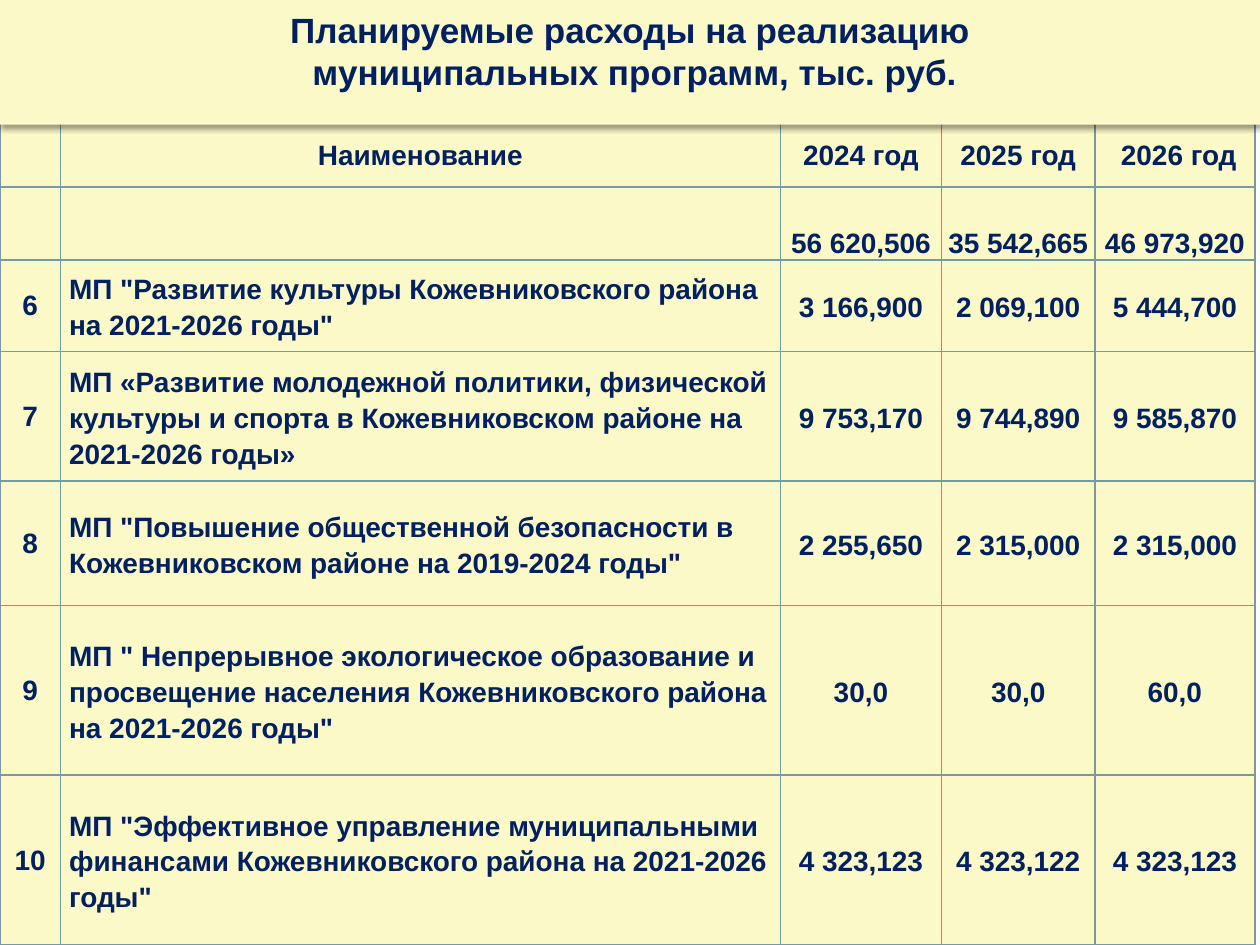
from dataclasses import dataclass

from lxml.etree import SubElement
from pptx import Presentation
from pptx.dml.color import RGBColor
from pptx.enum.text import MSO_ANCHOR as Anchor, MSO_AUTO_SIZE as AutoSize, PP_ALIGN as Align
from pptx.oxml.ns import qn
from pptx.util import Inches, Pt


@dataclass(frozen=True)
class Theme:
    paper: str = "FCF9C8"
    ink: str = "002060"
    border: str = "759AA5"
    shadow: str = "000000"
    font: str = "Arial"
    title_size: int = 20
    table_size: int = 16


THEME = Theme()
WIDTH, HEIGHT = Inches(10), Inches(7.5)

# Boxes: left, top, width, height as shares of the slide
TITLE_BOX = (0, 0, 1, 0.132)
TABLE_BOX = (0, 0.13, 0.996, 0.87)

# Relative column widths and row heights
COLUMNS = (0.48, 5.72, 1.28, 1.22, 1.27)
ROWS = (0.51, 0.58, 0.73, 1.03, 0.99, 1.35, 1.35)

TITLE = ("Планируемые расходы на реализацию", " муниципальных программ, тыс. руб.")
HEADER = ("", "Наименование", "2024 год", "2025 год", " 2026 год")
TOTALS = ("", "", "56 620,506", "35 542,665", "46 973,920")
PROGRAMS = (
    ("6", 'МП "Развитие культуры Кожевниковского района на 2021-2026 годы"',
     "3 166,900", "2 069,100", "5 444,700"),
    ("7", "МП «Развитие молодежной политики, физической культуры и спорта "
          "в Кожевниковском районе на 2021-2026 годы»",
     "9 753,170", "9 744,890", "9 585,870"),
    ("8", 'МП "Повышение общественной безопасности в Кожевниковском районе на 2019-2024 годы"',
     "2 255,650", "2 315,000", "2 315,000"),
    ("9", 'МП " Непрерывное экологическое образование и просвещение населения '
          'Кожевниковского района на 2021-2026 годы"',
     "30,0", "30,0", "60,0"),
    ("10", 'МП "Эффективное управление муниципальными финансами '
           'Кожевниковского района на 2021-2026 годы"',
     "4 323,123", "4 323,122", "4 323,123"),
)


def to_lengths(box):
    return [int(share * side) for share, side in zip(box, (WIDTH, HEIGHT) * 2)]


def write(paragraph, text, *, size, align=Align.CENTER, spacing=1.0):
    paragraph.alignment = align
    paragraph.line_spacing = spacing
    paragraph.space_before = paragraph.space_after = Pt(0)
    run = paragraph.add_run()
    run.text = text
    run.font.name = THEME.font
    run.font.size = Pt(size)
    run.font.bold = True
    run.font.color.rgb = RGBColor.from_string(THEME.ink)


def set_margins(target, left, top, right, bottom):
    target.margin_left, target.margin_top = Inches(left), Inches(top)
    target.margin_right, target.margin_bottom = Inches(right), Inches(bottom)


def fill_paper(target):
    target.fill.solid()
    target.fill.fore_color.rgb = RGBColor.from_string(THEME.paper)


def add_drop_shadow(shape):
    effects = SubElement(shape.element.spPr, qn("a:effectLst"))
    shadow = SubElement(effects, qn("a:outerShdw"), blurRad=str(Pt(3.1)), dist=str(Pt(2)),
                        dir="5400000", algn="t", rotWithShape="0")
    color = SubElement(shadow, qn("a:srgbClr"), val=THEME.shadow)
    SubElement(color, qn("a:alpha"), val="38000")


def add_borders(cell):
    properties = cell._tc.get_or_add_tcPr()
    for side in ("lnL", "lnR", "lnT", "lnB"):
        line = SubElement(properties, qn(f"a:{side}"), w=str(Pt(1)))
        SubElement(SubElement(line, qn("a:solidFill")), qn("a:srgbClr"), val=THEME.border)


def place_title(slide, box):
    title = slide.shapes.title
    title.left, title.top, title.width, title.height = to_lengths(box)
    fill_paper(title)
    title.line.fill.background()
    add_drop_shadow(title)
    frame = title.text_frame
    frame.word_wrap = True
    frame.auto_size = AutoSize.NONE
    frame.vertical_anchor = Anchor.TOP
    set_margins(frame, 0.1, 0.07, 0.1, 0.05)
    for index, text in enumerate(TITLE):
        paragraph = frame.add_paragraph() if index else frame.paragraphs[0]
        write(paragraph, text, size=THEME.title_size)
    # The band lies over the table so that its shadow shows
    title.element.getparent().append(title.element)


def place_table(slide, box):
    left, top, width, height = to_lengths(box)
    table = slide.shapes.add_table(len(ROWS), len(COLUMNS), left, top, width, height).table
    table.first_row = table.horz_banding = False
    for column, weight in zip(table.columns, COLUMNS):
        column.width = int(width * weight / sum(COLUMNS))
    for row, weight in zip(table.rows, ROWS):
        row.height = int(height * weight / sum(ROWS))

    for row_index, values in enumerate((HEADER, TOTALS, *PROGRAMS)):
        for column_index, text in enumerate(values):
            cell = table.cell(row_index, column_index)
            add_borders(cell)
            fill_paper(cell)
            if not text:
                continue
            # Program names and amounts are set looser than headings and numbers
            body = row_index > 1 and column_index > 0
            set_margins(cell, *((0.07, 0, 0.07, 0) if body else (0.01, 0.01, 0.01, 0)))
            cell.vertical_anchor = Anchor.BOTTOM if row_index == 1 else Anchor.MIDDLE
            write(cell.text_frame.paragraphs[0], text, size=THEME.table_size,
                  align=Align.LEFT if body and column_index == 1 else Align.CENTER,
                  spacing=1.15 if body else 1.0)


def main():
    presentation = Presentation()
    presentation.slide_width, presentation.slide_height = WIDTH, HEIGHT
    slide = presentation.slides.add_slide(presentation.slide_layouts[5])
    place_table(slide, TABLE_BOX)
    place_title(slide, TITLE_BOX)
    presentation.save("out.pptx")


if __name__ == "__main__":
    main()
